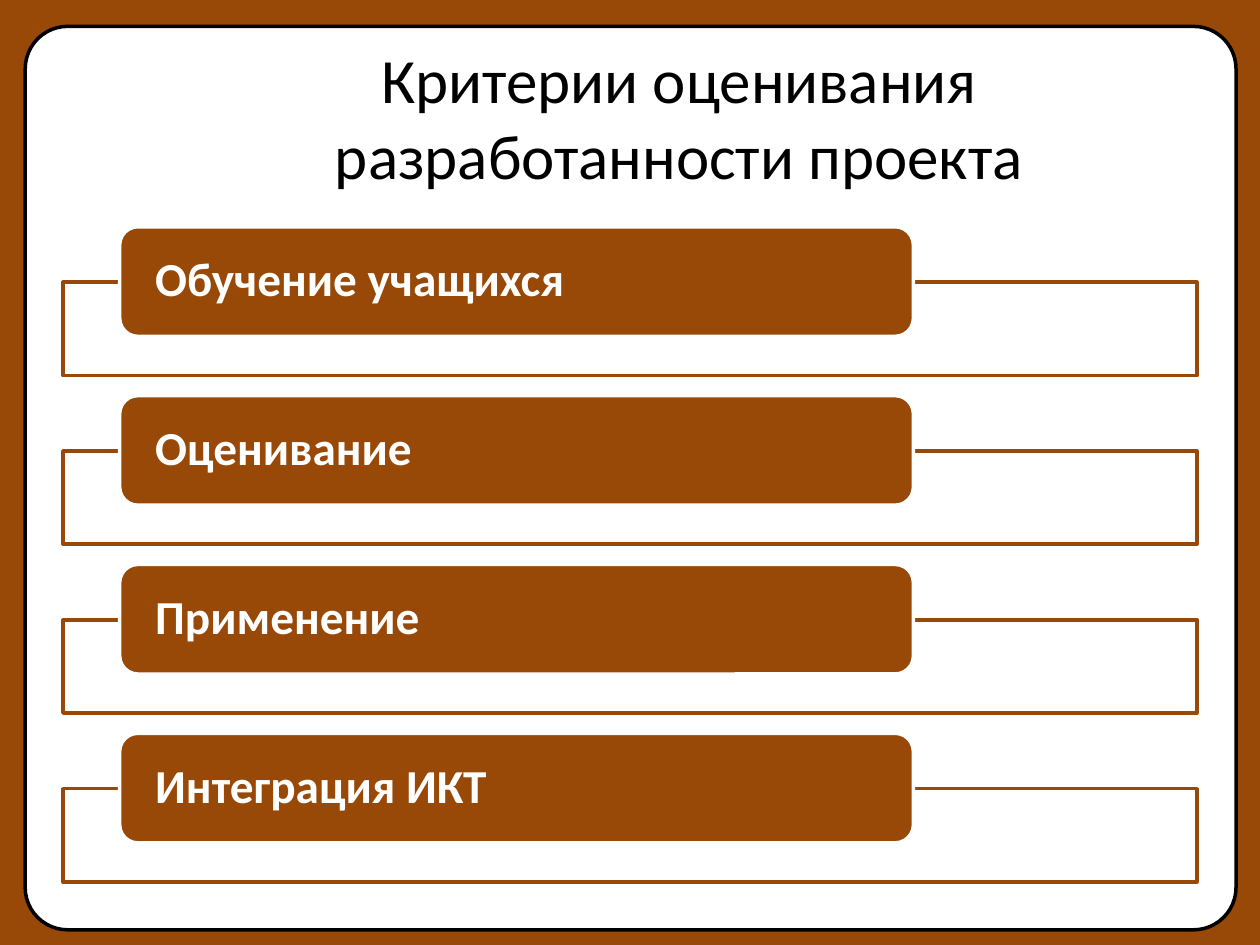
from lxml import etree
from pptx import Presentation
from pptx.dml.color import RGBColor
from pptx.enum.shapes import MSO_SHAPE as Shape
from pptx.enum.text import MSO_ANCHOR as Anchor, PP_ALIGN as Align
from pptx.oxml.ns import qn
from pptx.util import Inches, Pt

BROWN = RGBColor(0x98, 0x48, 0x07)
WHITE = RGBColor(0xFF, 0xFF, 0xFF)
BLACK = RGBColor(0x00, 0x00, 0x00)
FONT = "Calibri"
CRITERIA = ["Обучение учащихся", "Оценивание", "Применение", "Интеграция ИКТ"]


def add_box(slide, kind, left, top, width, height, fill, line):
    shape = slide.shapes.add_shape(
        kind, Inches(left), Inches(top), Inches(width), Inches(height))
    shape.shadow.inherit = False
    shape.fill.solid()
    shape.fill.fore_color.rgb = fill
    shape.line.color.rgb = line
    shape.line.width = Pt(2)
    return shape


def set_text(shape, text, size, color, bold, align, side_inset, end_inset):
    frame = shape.text_frame
    frame.word_wrap = True
    frame.vertical_anchor = Anchor.MIDDLE
    frame.margin_left = frame.margin_right = Inches(side_inset)
    frame.margin_top = frame.margin_bottom = Inches(end_inset)
    frame.text = text
    paragraph = frame.paragraphs[0]
    paragraph.alignment = align
    font = paragraph.runs[0].font
    font.name, font.size, font.bold = FONT, Pt(size), bold
    font.color.rgb = color
    return paragraph


def add_panel(slide, left, top, width, height):
    panel = add_box(slide, Shape.ROUNDED_RECTANGLE, left, top, width, height, WHITE, BLACK)
    panel.adjustments[0] = 0.047


def add_title(slide, text, left, top, width, height):
    title = slide.shapes.add_textbox(
        Inches(left), Inches(top), Inches(width), Inches(height))
    set_text(title, text, 36, BLACK, False, Align.CENTER, 0.1, 0.05)


def add_criterion(slide, text, left, top, width):
    # Outlined frame, slightly transparent
    frame = add_box(slide, Shape.RECTANGLE, left, top + 0.44, width, 0.74, WHITE, BROWN)
    color = frame.fill._xPr.find(qn("a:solidFill"))[0]
    etree.SubElement(color, qn("a:alpha"), val="90000")
    # Label tab covering the frame's top edge
    tab = add_box(slide, Shape.ROUNDED_RECTANGLE, left + 0.45, top, width * 0.7, 0.87,
                  BROWN, WHITE)
    paragraph = set_text(tab, text, 27, WHITE, True, Align.LEFT, 0.24, 0)
    paragraph.line_spacing = 0.9


def add_criteria_list(slide, criteria, left, top, width, height):
    pitch = height / len(criteria)
    for index, text in enumerate(criteria):
        add_criterion(slide, text, left, top + index * pitch, width)


def main():
    presentation = Presentation()
    presentation.slide_width, presentation.slide_height = Inches(10), Inches(7.5)
    slide = presentation.slides.add_slide(presentation.slide_layouts[6])
    slide.background.fill.solid()
    slide.background.fill.fore_color.rgb = BROWN

    add_panel(slide, 0.2, 0.21, 9.61, 7.17)
    add_title(slide, "Критерии оценивания разработанности проекта", 1.28, 0.3, 8.22, 1.25)
    add_criteria_list(slide, CRITERIA, 0.5, 1.8, 9, 5.36)

    presentation.save("out.pptx")


if __name__ == "__main__":
    main()
